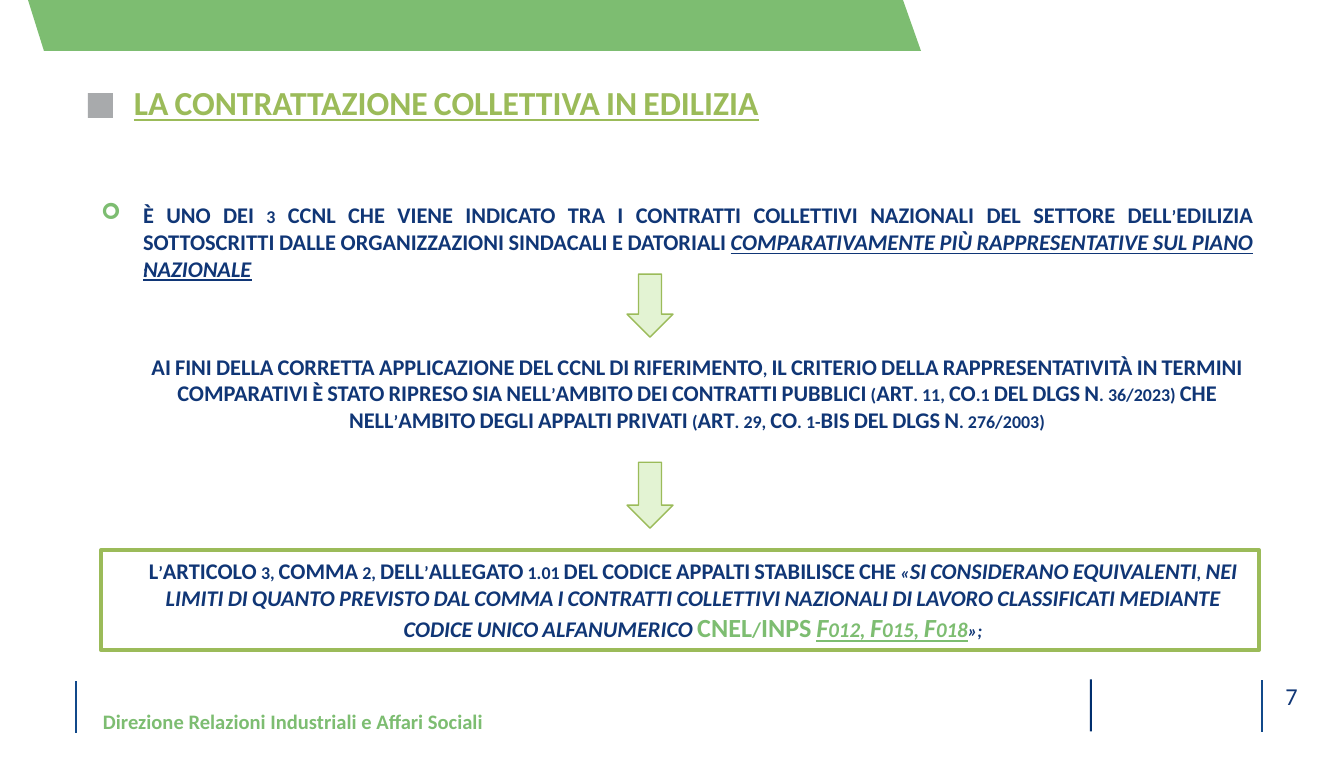
from dataclasses import dataclass, field
from typing import Optional

import pptx
import pptx.dml.color
import pptx.enum.shapes
import pptx.enum.text
import pptx.oxml.ns
import pptx.util
from lxml import etree

EMU_PER_PX = 914400 / 134.4
FONT = "Calibri"
COLORS = {
    "navy": "103676",
    "rule": "11498A",
    "divider": "002E6E",
    "leaf": "7DBD71",
    "olive": "9BBB59",
    "arrow": "92D050",
    "grey": "939598",
    "white": "FFFFFF",
}
ALIGN = pptx.enum.text.PP_ALIGN
SHAPE = pptx.enum.shapes.MSO_SHAPE


@dataclass
class Run:
    text: str
    size: int = 12
    color: str = "navy"
    bold: bool = True
    italic: bool = False
    underline: bool = False
    small_caps: bool = True


@dataclass
class Paragraph:
    runs: list[Run]
    align: ALIGN = ALIGN.LEFT
    margin: int = 0
    indent: int = 0
    before: int = 0
    bullet: str = ""


@dataclass
class Box:
    left: int
    top: int
    width: int
    height: int


@dataclass
class Block:
    shape: SHAPE
    box: Box
    fill: str
    alpha: int = 100
    line: Optional[str] = None
    weight: float = 0.75
    paragraphs: list[Paragraph] = field(default_factory=list)


def px(value: int) -> int:
    return round(value * EMU_PER_PX)


def rgb(name: str) -> pptx.dml.color.RGBColor:
    return pptx.dml.color.RGBColor.from_string(COLORS[name])


def sub(parent, tag: str, **attributes: str):
    child = etree.SubElement(parent, pptx.oxml.ns.qn(tag))
    for key, value in attributes.items():
        child.set(key, value)
    return child


def write(frame, paragraphs: list[Paragraph], *, inset: tuple[int, int] = (0, 0)) -> None:
    frame.word_wrap = True
    frame.vertical_anchor = pptx.enum.text.MSO_ANCHOR.TOP
    frame.margin_left = frame.margin_right = px(inset[0])
    frame.margin_top = frame.margin_bottom = px(inset[1])
    for index, item in enumerate(paragraphs):
        paragraph = frame.paragraphs[0] if index == 0 else frame.add_paragraph()
        paragraph.alignment = item.align
        if item.before:
            paragraph.space_before = pptx.util.Pt(item.before)
        properties = paragraph._p.get_or_add_pPr()
        properties.set("marL", str(px(item.margin)))
        properties.set("indent", str(px(item.indent)))
        if item.bullet:
            sub(sub(properties, "a:buClr"), "a:srgbClr", val=COLORS["leaf"])
            sub(properties, "a:buFont", typeface="Wingdings")
            sub(properties, "a:buChar", char=item.bullet)
        for part in item.runs:
            run = paragraph.add_run()
            run.text = part.text
            run.font.name = FONT
            run.font.size = pptx.util.Pt(part.size)
            run.font.color.rgb = rgb(part.color)
            run.font.bold = part.bold
            run.font.italic = part.italic
            run.font.underline = part.underline
            if part.small_caps:
                run._r.get_or_add_rPr().set("cap", "small")


def add_text(slide, box: Box, paragraphs: list[Paragraph], *, inset: tuple[int, int] = (0, 0)) -> None:
    text_box = slide.shapes.add_textbox(px(box.left), px(box.top), px(box.width), px(box.height))
    write(text_box.text_frame, paragraphs, inset=inset)


def paint(shape, fill: str, alpha: int = 100, line: Optional[str] = None, weight: float = 0.75) -> None:
    shape.shadow.inherit = False
    shape.fill.solid()
    shape.fill.fore_color.rgb = rgb(fill)
    if alpha < 100:
        color = shape._element.spPr.find(".//" + pptx.oxml.ns.qn("a:srgbClr"))
        sub(color, "a:alpha", val=str(alpha * 1000))
    if line:
        shape.line.color.rgb = rgb(line)
        shape.line.width = pptx.util.Pt(weight)
    else:
        shape.line.fill.background()


def add_block(slide, block: Block) -> None:
    box = block.box
    shape = slide.shapes.add_shape(block.shape, px(box.left), px(box.top), px(box.width), px(box.height))
    paint(shape, block.fill, block.alpha, block.line, block.weight)
    if block.paragraphs:
        write(shape.text_frame, block.paragraphs, inset=(13, 7))


def add_rule(slide, x: int, top: int, length: int) -> None:
    rule = slide.shapes.add_connector(
        pptx.enum.shapes.MSO_CONNECTOR.STRAIGHT, px(x), px(top), px(x), px(top + length))
    rule.line.color.rgb = rgb("rule")
    rule.line.width = pptx.util.Pt(1)
    sub(rule._element.spPr, "a:effectLst")


def main() -> None:
    deck = pptx.Presentation()
    deck.slide_width, deck.slide_height = pptx.util.Inches(10), pptx.util.Inches(5.63)
    slide = deck.slides.add_slide(deck.slide_layouts[6])

    # Footer rules
    add_rule(slide, 76, 681, 52)
    add_rule(slide, 1262, 680, 52)
    add_block(slide, Block(SHAPE.RECTANGLE, Box(1090, 679, 2, 52), "divider"))

    # Header band, title and its marker
    band = slide.shapes.build_freeform(28, 0, scale=EMU_PER_PX)
    band.add_line_segments([(44, 51), (921, 51), (903, 0)], close=True)
    paint(band.convert_to_shape(), "leaf")
    add_block(slide, Block(SHAPE.RECTANGLE, Box(88, 93, 25, 25), "grey", alpha=80))
    add_text(slide, Box(134, 82, 985, 40), [Paragraph([
        Run("LA CONTRATTAZIONE COLLETTIVA IN EDILIZIA", size=18, color="olive", underline=True)])])

    # Representativeness criterion
    criterion = Paragraph([
        Run("È UNO DEI 3 CCNL CHE VIENE INDICATO TRA I CONTRATTI COLLETTIVI NAZIONALI DEL SETTORE "
            "DELL’EDILIZIA SOTTOSCRITTI DALLE ORGANIZZAZIONI SINDACALI E DATORIALI "),
        Run("COMPARATIVAMENTE PIÙ RAPPRESENTATIVE SUL PIANO NAZIONALE", italic=True, underline=True),
        Run(":"),
    ], align=ALIGN.JUSTIFY, margin=42, indent=-42, bullet="➢")
    application = Paragraph([
        Run("AI FINI DELLA CORRETTA APPLICAZIONE DEL CCNL DI RIFERIMENTO, IL CRITERIO DELLA "
            "RAPPRESENTATIVITÀ IN TERMINI COMPARATIVI È STATO RIPRESO SIA NELL’AMBITO DEI CONTRATTI "
            "PUBBLICI (ART. 11, CO.1 DEL DLGS N. 36/2023) CHE NELL’AMBITO DEGLI APPALTI PRIVATI "
            "(ART. 29, CO. 1-BIS DEL DLGS N. 276/2003)"),
    ], align=ALIGN.CENTER, margin=40, before=38)
    add_text(slide, Box(88, 194, 1178, 249), [criterion, application], inset=(13, 7))

    # Equivalent contracts
    equivalence = Paragraph([
        Run("L’ARTICOLO 3, COMMA 2, DELL’ALLEGATO 1.01 DEL CODICE APPALTI STABILISCE CHE "),
        Run("«SI CONSIDERANO EQUIVALENTI, NEI LIMITI DI QUANTO PREVISTO DAL COMMA\u00a0I CONTRATTI "
            "COLLETTIVI NAZIONALI DI LAVORO CLASSIFICATI MEDIANTE CODICE UNICO ALFANUMERICO ", italic=True),
        Run("CNEL/INPS ", size=14, color="leaf"),
        Run("F012, F015, F018", size=14, color="leaf", italic=True, underline=True),
        Run("»;", italic=True),
    ], align=ALIGN.CENTER, margin=26)
    add_block(slide, Block(SHAPE.RECTANGLE, Box(101, 550, 1158, 100), "white", line="olive",
                           weight=2, paragraphs=[equivalence]))

    # Arrows between the steps
    for top, height in ((274, 63), (462, 66)):
        add_block(slide, Block(SHAPE.DOWN_ARROW, Box(627, top, 46, height), "arrow", alpha=25, line="olive"))

    # Footer texts
    add_text(slide, Box(102, 709, 594, 26), [Paragraph([
        Run("Direzione Relazioni Industriali e Affari Sociali", size=11, color="leaf", small_caps=False)], margin=1)])
    add_text(slide, Box(1266, 681, 51, 32), [Paragraph([
        Run("7", size=13, bold=False, small_caps=False)], align=ALIGN.CENTER)])

    deck.save("out.pptx")


if __name__ == "__main__":
    main()
